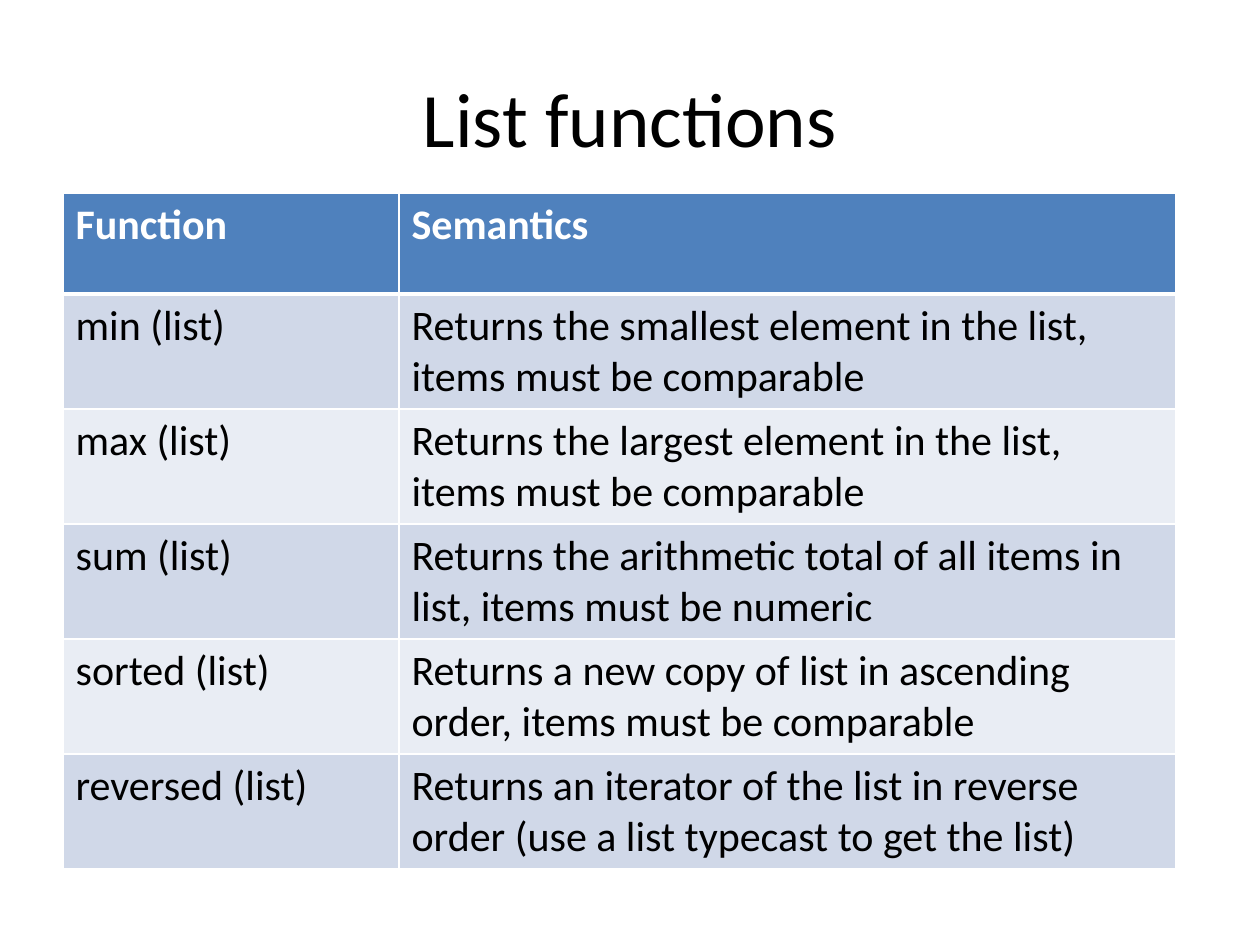
from dataclasses import dataclass

from lxml.etree import SubElement
from pptx import Presentation
from pptx.dml.color import RGBColor
from pptx.enum.text import MSO_ANCHOR, PP_ALIGN
from pptx.oxml.ns import qn
from pptx.util import Emu, Pt

PX_PER_INCH = 126
FONT = "Calibri"
COLORS = {
    "text": "000000",
    "header_text": "FFFFFF",
    "header": "4F81BD",
    "odd_row": "D0D8E8",
    "even_row": "E9EDF4",
    "border": "FFFFFF",
}


@dataclass(frozen=True)
class TableRow:
    function: str
    semantics: str


HEADER = TableRow("Function", "Semantics")
FUNCTIONS = [
    TableRow("min (list)", "Returns the smallest element in the list, items must be comparable"),
    TableRow("max (list)", "Returns the largest element in the list, items must be comparable"),
    TableRow("sum (list)", "Returns the arithmetic total of all items in list, items must be numeric"),
    TableRow("sorted (list)", "Returns a new copy of list in ascending order, items must be comparable"),
    TableRow(
        "reversed (list)",
        "Returns an iterator of the list in reverse order (use a list typecast to get the list)",
    ),
]
COLUMN_WIDTHS = (336, 777)
HEADER_HEIGHT = 101
ROW_HEIGHT = 115


def px(length: int) -> Emu:
    return Emu(round(length * 914400 / PX_PER_INCH))


def add_run(paragraph, text: str, size: int, color: str, bold: bool = False) -> None:
    run = paragraph.add_run()
    run.text = text
    run.font.name = FONT
    run.font.size = Pt(size)
    run.font.bold = bold
    run.font.color.rgb = RGBColor.from_string(COLORS[color])


def add_title(slide, text: str) -> None:
    shape = slide.shapes.add_textbox(px(63), px(38), px(1134), px(158))
    frame = shape.text_frame
    frame.word_wrap = True
    frame.vertical_anchor = MSO_ANCHOR.MIDDLE
    paragraph = frame.paragraphs[0]
    paragraph.alignment = PP_ALIGN.CENTER
    add_run(paragraph, text, 44, "text")


def set_borders(cell, top: int, bottom: int) -> None:
    properties = cell._tc.get_or_add_tcPr()
    for side, width in {"L": 1, "R": 1, "T": top, "B": bottom}.items():
        line = SubElement(properties, qn(f"a:ln{side}"), w=str(Pt(width)))
        fill = SubElement(line, qn("a:solidFill"))
        SubElement(fill, qn("a:srgbClr"), val=COLORS["border"])


def fill_row(table, index: int, row: TableRow) -> None:
    is_header = index == 0
    fill_color = "header" if is_header else "odd_row" if index % 2 else "even_row"
    text_color = "header_text" if is_header else "text"
    table.rows[index].height = px(HEADER_HEIGHT if is_header else ROW_HEIGHT)
    for column, text in enumerate((row.function, row.semantics)):
        cell = table.cell(index, column)
        set_borders(cell, top=3 if index == 1 else 1, bottom=3 if is_header else 1)
        cell.fill.solid()
        cell.fill.fore_color.rgb = RGBColor.from_string(COLORS[fill_color])
        add_run(cell.text_frame.paragraphs[0], text, 24, text_color, is_header)


def add_function_table(slide, rows: list[TableRow]) -> None:
    height = HEADER_HEIGHT + ROW_HEIGHT * (len(rows) - 1)
    table = slide.shapes.add_table(
        len(rows), len(COLUMN_WIDTHS), px(63), px(193), px(sum(COLUMN_WIDTHS)), px(height)
    ).table
    for column, width in zip(table.columns, COLUMN_WIDTHS):
        column.width = px(width)
    for index, row in enumerate(rows):
        fill_row(table, index, row)


def main() -> None:
    """Build the list functions slide and save it."""
    presentation = Presentation()
    presentation.slide_width = px(1260)
    presentation.slide_height = px(945)
    slide = presentation.slides.add_slide(presentation.slide_layouts[6])
    add_title(slide, "List functions")
    add_function_table(slide, [HEADER, *FUNCTIONS])
    presentation.save("out.pptx")


if __name__ == "__main__":
    main()
